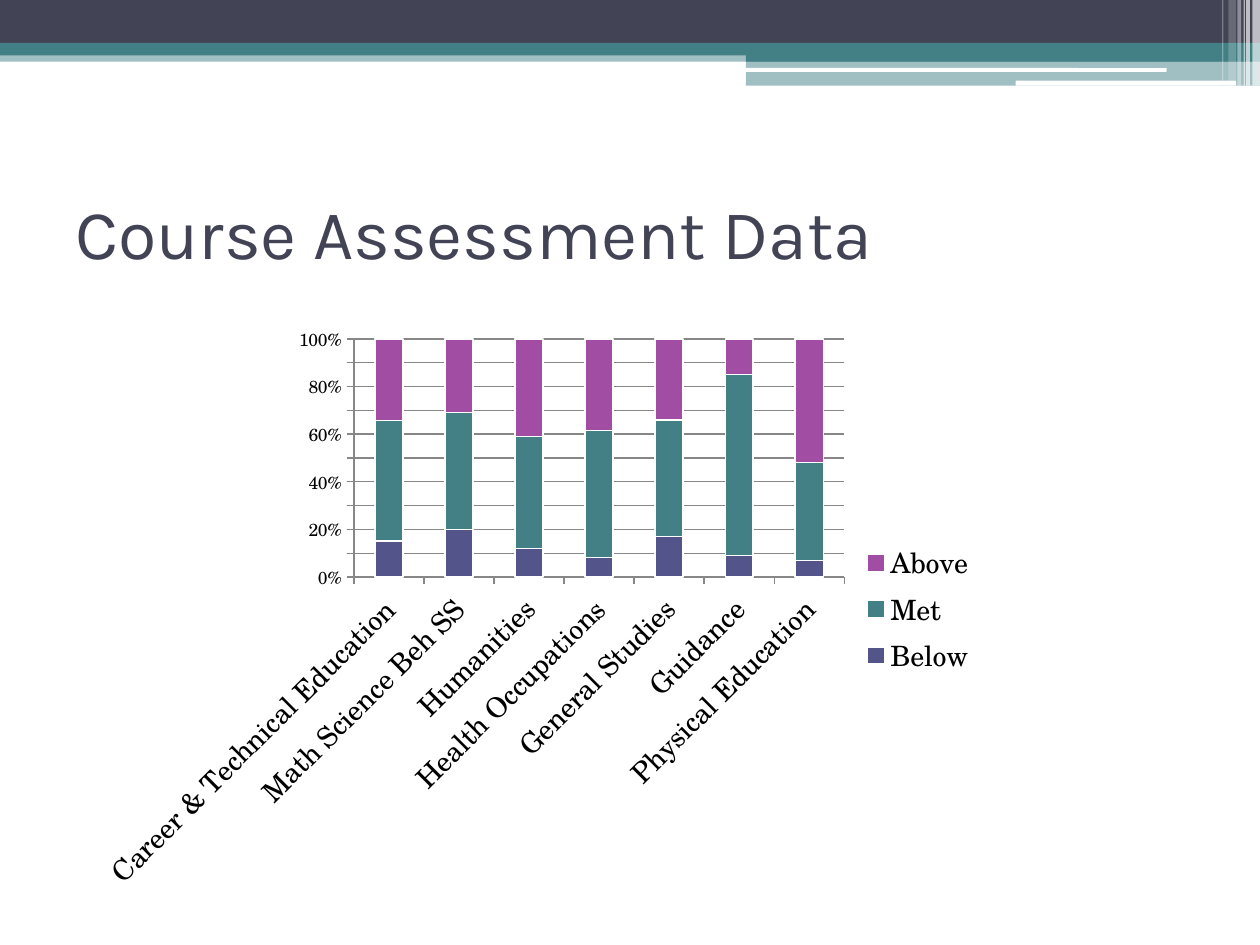
from lxml import etree
from pptx import Presentation
from pptx import util as u
from pptx.chart.data import CategoryChartData
from pptx.dml.color import RGBColor
from pptx.enum import chart as ch, shapes, text
from pptx.oxml import parse_xml
from pptx.oxml.ns import nsdecls, qn

INK, TEAL, WHITE, GREY = "424456", "438086", "FFFFFF", "878787"


def color(hex_code):
    return RGBColor.from_string(hex_code)


class Deck:
    title_font = "Karla"
    chart_font = "TeX Gyre Schola"

    def __init__(self, slide):
        self.slide = slide

    def bar(self, left, top, width, height, fill, opacity=100, rounded=False):
        kind = shapes.MSO_SHAPE.ROUNDED_RECTANGLE if rounded else shapes.MSO_SHAPE.RECTANGLE
        bar = self.slide.shapes.add_shape(
            kind, *(u.Inches(n) for n in (left, top, width, height)))
        bar.shadow.inherit = False
        bar.line.fill.background()
        bar.fill.solid()
        bar.fill.fore_color.rgb = color(fill)
        if opacity < 100:
            tint = bar.fill._xPr.find(".//" + qn("a:srgbClr"))
            etree.SubElement(tint, qn("a:alpha")).set("val", str(opacity * 1000))

    def title(self, wording, left, top, width, height):
        box = self.slide.shapes.add_textbox(
            *(u.Inches(n) for n in (left, top, width, height)))
        frame = box.text_frame
        frame.word_wrap = True
        frame.vertical_anchor = text.MSO_ANCHOR.MIDDLE
        frame.text = wording
        self.style(frame.paragraphs[0].runs[0].font, self.title_font, 40, INK)

    def style(self, font, name, size, hex_code):
        font.name, font.size = name, u.Pt(size)
        font.color.rgb = color(hex_code)

    def stacked_chart(self, categories, series, frame, plot_box, legend_box):
        data = CategoryChartData(number_format="0")
        data.categories = categories
        for name, values, _ in series:
            data.add_series(name, values)
        chart = self.slide.shapes.add_chart(
            ch.XL_CHART_TYPE.COLUMN_STACKED_100,
            *(u.Inches(n) for n in frame), data).chart
        chart.has_title = False
        self.style(chart.font, self.chart_font, 10, "000000")

        # Columns
        plot = chart.plots[0]
        plot.gap_width, plot.overlap, plot.vary_by_categories = 150, 100, False
        for column, (_, _, fill) in zip(plot.series, series):
            column.format.fill.solid()
            column.format.fill.fore_color.rgb = color(fill)
            column.format.line.color.rgb = color(WHITE)
            column.format.line.width = u.Pt(0.75)

        # Axes
        percent, subjects = chart.value_axis, chart.category_axis
        percent.minimum_scale, percent.maximum_scale = 0, 1
        percent.major_unit = 0.1
        percent.tick_labels.number_format = "0%"
        percent.tick_labels.number_format_is_linked = False
        self.style(percent.tick_labels.font, self.chart_font, 10, "000000")
        self.style(subjects.tick_labels.font, self.chart_font, 16, "000000")
        subjects._element.find(qn("c:txPr")).find(qn("a:bodyPr")).set("rot", "-2700000")
        for axis in (percent, subjects):
            axis.major_tick_mark = ch.XL_TICK_MARK.OUTSIDE
            axis.format.line.color.rgb = color(GREY)
        percent.major_gridlines.format.line.color.rgb = color(GREY)

        # Legend
        chart.has_legend = True
        legend = chart.legend
        legend.position = ch.XL_LEGEND_POSITION.RIGHT
        legend.include_in_layout = False
        self.style(legend.font, self.chart_font, 16, "000000")

        # Fixed places for the plot area and the legend
        area = chart._chartSpace.find(".//" + qn("c:plotArea"))
        key = legend._element
        for part in (area, key):
            for old in part.findall(qn("c:layout")):
                part.remove(old)
        area.insert(0, self.layout(frame, plot_box, inner=True))
        key.find(qn("c:legendPos")).addnext(self.layout(frame, legend_box))

    def layout(self, frame, box, inner=False):
        """Turn a box in slide inches into shares of the chart frame."""
        left, top, width, height = frame
        x, y = (box[0] - left) / width, (box[1] - top) / height
        w, h = box[2] / width, box[3] / height
        target = '<c:layoutTarget val="inner"/>' if inner else ""
        return parse_xml(
            f'<c:layout {nsdecls("c")}><c:manualLayout>{target}'
            '<c:xMode val="edge"/><c:yMode val="edge"/>'
            f'<c:x val="{x:.4f}"/><c:y val="{y:.4f}"/>'
            f'<c:w val="{w:.4f}"/><c:h val="{h:.4f}"/>'
            '</c:manualLayout></c:layout>')


def main():
    prs = Presentation()
    prs.slide_width, prs.slide_height = u.Inches(10), u.Inches(7.5)
    deck = Deck(prs.slides.add_slide(prs.slide_layouts[6]))

    # Header bands
    deck.bar(0, 0.4, 10, 0.09, TEAL, 50)
    deck.bar(0, 0, 10, 0.34, INK)
    deck.bar(0, 0.34, 10, 0.1, TEAL)
    deck.bar(5.92, 0.39, 4.08, 0.1, TEAL)
    deck.bar(5.92, 0.48, 4.08, 0.2, TEAL, 50)
    deck.bar(5.91, 0.54, 3.35, 0.03, WHITE, rounded=True)
    deck.bar(8.06, 0.64, 1.75, 0.04, WHITE, rounded=True)

    # Translucent stripes at the right edge: left, width, height, opacity
    for left, width, height, opacity in (
            (9.94, 0.06, 0.68, 65), (9.89, 0.03, 0.68, 65), (9.87, 0.01, 0.68, 60),
            (9.82, 0.03, 0.68, 40), (9.75, 0.06, 0.64, 20), (9.7, 0.01, 0.64, 30)):
        deck.bar(left, 0, width, height, WHITE, opacity)

    # Title
    deck.title("Course Assessment Data", 0.5, 1.25, 9, 1.17)

    # Assessment results by subject
    subjects = ("Career & Technical Education", "Math Science Beh SS", "Humanities",
                "Health Occupations", "General Studies", "Guidance", "Physical Education")
    results = (("Below ", (15, 20, 12, 8, 17, 9, 7), "53548A"),
               ("Met", (50, 49, 47, 53, 49, 76, 41), TEAL),
               ("Above", (34, 31, 41, 38, 34, 15, 52), "A04DA3"))
    deck.stacked_chart(subjects, results, frame=(0.67, 2.5, 7.27, 4.67),
                       plot_box=(2.81, 2.69, 3.89, 1.89),
                       legend_box=(6.77, 4.26, 1.09, 1.15))

    prs.save("out.pptx")


if __name__ == "__main__":
    main()
